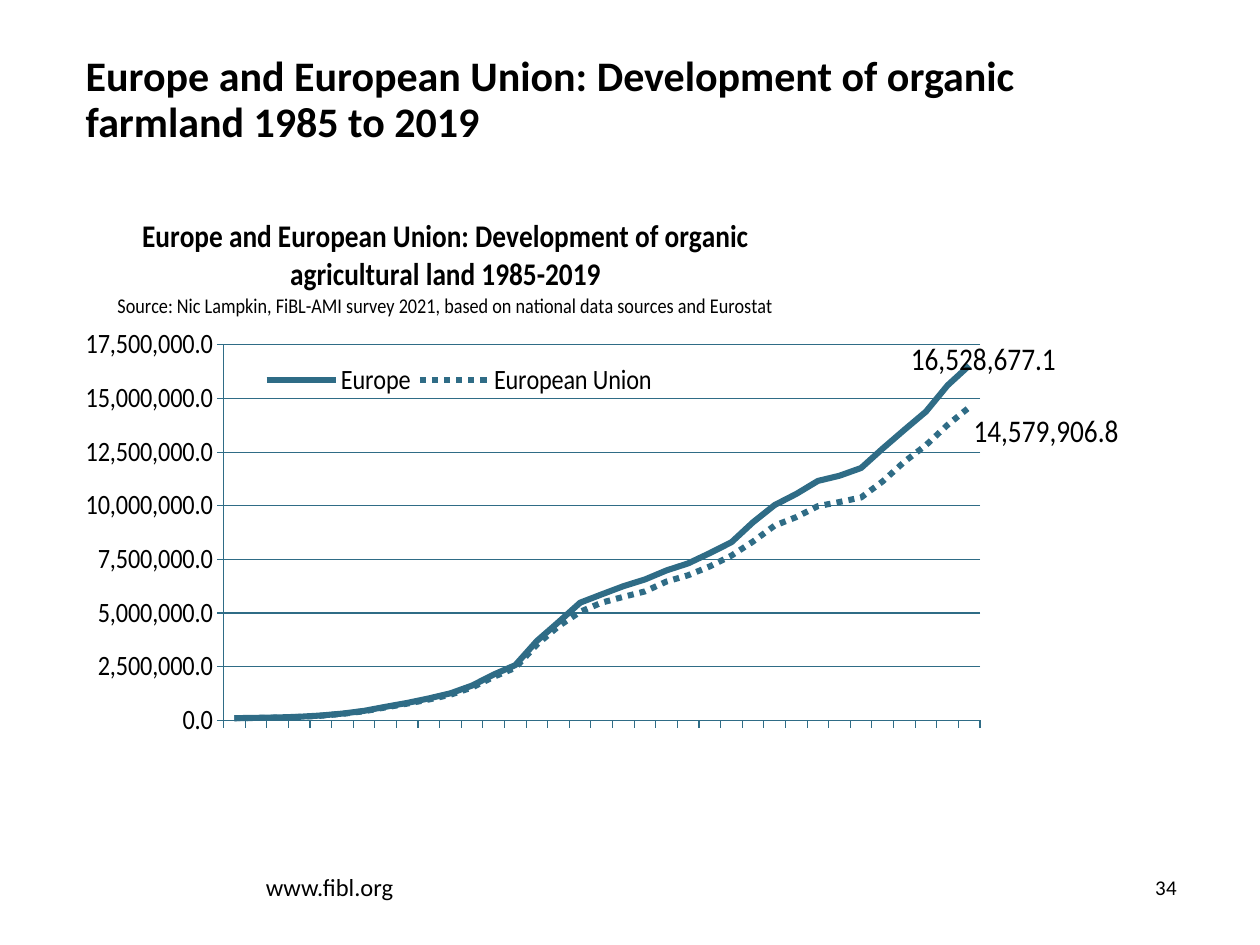
"""Build the slide on the growth of organic farmland in Europe."""
from dataclasses import dataclass

import pptx
import pptx.chart.data
import pptx.dml.color
import pptx.enum.chart
import pptx.enum.dml
import pptx.enum.text
import pptx.oxml
import pptx.oxml.ns
import pptx.util

Inches, Pt = pptx.util.Inches, pptx.util.Pt
RGBColor = pptx.dml.color.RGBColor
ALIGN = pptx.enum.text.PP_ALIGN
ANCHOR = pptx.enum.text.MSO_ANCHOR
XL = pptx.enum.chart
DASH = pptx.enum.dml.MSO_LINE

EUROPE = [
    105230, 117944, 138230, 170699, 228271, 316939.9, 443658, 634172, 813842,
    1023515, 1262265, 1621901.6, 2135723.8, 2573664.9, 3700993.1, 4581068.2,
    5484318.9, 5870898.1, 6249192.8, 6564578.8, 6988448, 7313417.3, 7792048.5,
    8296365, 9229231.5, 10028781.1, 10548522.9, 11154985.3, 11397344.5,
    11757323.4, 12663904.2, 13535234.8, 14382479.6, 15607635.5, 16528677.1]
EUROPEAN_UNION = [
    100310, 112310, 131354, 163112, 217657, 304344, 425884, 606940, 783098,
    974722, 1198629, 1530035, 2029210, 2449912, 3534806.4, 4384719, 5060686,
    5484723, 5752530.7, 6007811.7, 6469179, 6760862, 7171537.2, 7675069,
    8330296.4, 9074252.5, 9468597.1, 9980115, 10169686.3, 10382977.7,
    11135132.1, 12047878.1, 12819818.2, 13762809.7, 14579906.8]


@dataclass
class Theme:
    font: str = "Calibri"
    text: RGBColor = RGBColor(0, 0, 0)
    accent: RGBColor = RGBColor(0x2F, 0x6C, 0x86)
    title: int = 24
    chart: int = 18
    axis: int = 16
    footer: int = 14
    small: int = 12
    thin: float = 0.75
    thick: float = 4


class Deck:
    def __init__(self, prs, theme):
        self.t = theme
        self.s = prs.slides.add_slide(prs.slide_layouts[5])

    def style(self, font, size, bold=False):
        font.name, font.size, font.bold = self.t.font, Pt(size), bold
        font.color.rgb = self.t.text

    def stroke(self, line, width):
        line.color.rgb, line.width = self.t.accent, Pt(width)

    def layout(self, parent, index, **values):
        for old in parent.findall(pptx.oxml.ns.qn("c:layout")):
            parent.remove(old)
        items = "".join(f'<c:{k} val="{v}"/>' for k, v in values.items())
        parent.insert(index, pptx.oxml.parse_xml(
            f'<c:layout {pptx.oxml.ns.nsdecls("c")}>'
            f"<c:manualLayout>{items}</c:manualLayout></c:layout>"))

    def title(self, text, x, y, w, h):
        sp = self.s.shapes.title
        sp.left, sp.top, sp.width, sp.height = map(Inches, (x, y, w, h))
        tf = sp.text_frame
        tf.text = text
        tf.word_wrap, tf.vertical_anchor = True, ANCHOR.TOP
        tf.auto_size = pptx.enum.text.MSO_AUTO_SIZE.NONE
        tf.margin_left = tf.margin_right = tf.margin_top = tf.margin_bottom = 0
        p = tf.paragraphs[0]
        p.alignment, p.line_spacing = ALIGN.LEFT, 0.9
        self.style(p.font, self.t.title, True)

    def text(self, text, x, y, w, h, size, align=ALIGN.LEFT, spacing=0):
        sp = self.s.shapes.add_textbox(*map(Inches, (x, y, w, h)))
        tf = sp.text_frame
        tf.word_wrap, tf.vertical_anchor = True, ANCHOR.BOTTOM
        tf.margin_left = tf.margin_right = 0
        p = tf.paragraphs[0]
        p.alignment = align
        r = p.add_run()
        r.text = text
        self.style(p.font, size)
        if spacing:
            r.font._element.set("spc", str(spacing))

    def line_chart(self, cats, series, x, y, w, h):
        data = pptx.chart.data.CategoryChartData(number_format="#,##0.0")
        data.categories = cats
        for name, vals in series:
            data.add_series(name, vals)
        frame = self.s.shapes.add_chart(
            XL.XL_CHART_TYPE.LINE, *map(Inches, (x, y, w, h)), data)
        chart = frame.chart
        self.style(chart.font, self.t.chart)
        self.layout(chart._chartSpace.chart.plotArea, 0, layoutTarget="inner",
                    xMode="edge", yMode="edge", x=0.122, y=0.245, w=0.844, h=0.632)
        return chart

    def chart_title(self, chart, heading, source):
        tf = chart.chart_title.text_frame
        tf.text = heading
        self.style(tf.paragraphs[0].font, self.t.chart, True)
        p = tf.add_paragraph()
        p.text = source
        self.style(p.font, self.t.small)
        self.layout(chart.chart_title._element, 1,
                    xMode="edge", yMode="edge", x=0, y=0.02)

    def axes(self, chart, top, step):
        cat, val = chart.category_axis, chart.value_axis
        for axis in (cat, val):
            self.style(axis.tick_labels.font, self.t.axis)
            self.stroke(axis.format.line, self.t.thin)
            axis.major_tick_mark = XL.XL_TICK_MARK.OUTSIDE
        cat.tick_label_position = XL.XL_TICK_LABEL_POSITION.NONE
        val.minimum_scale, val.maximum_scale, val.major_unit = 0, top, step
        val.tick_labels.number_format = "#,##0.0"
        val.tick_labels.number_format_is_linked = False
        self.stroke(val.major_gridlines.format.line, self.t.thin)

    def legend(self, chart):
        chart.has_legend = True
        legend = chart.legend
        legend.position = XL.XL_LEGEND_POSITION.TOP
        legend.include_in_layout = False
        self.style(legend.font, self.t.axis)
        self.layout(legend._element, 1, xMode="edge", yMode="edge",
                    x=0.16, y=0.27, w=0.45, h=0.07)

    def series(self, ser, dash, dx, dy):
        ser.smooth = False
        self.stroke(ser.format.line, self.t.thick)
        ser.format.line.dash_style = dash
        ser.data_labels.show_value = False
        label = ser.points[len(ser.values) - 1].data_label
        self.style(label.font, self.t.chart)
        label.position = XL.XL_LABEL_POSITION.RIGHT
        self.layout(label._dLbl, 1, x=dx, y=dy)


def main():
    prs = pptx.Presentation()
    prs.slide_width, prs.slide_height = Inches(10), Inches(7.5)
    theme = Theme()
    deck = Deck(prs, theme)
    deck.title("Europe and European Union: Development of organic farmland 1985 to 2019",
               0.68, 0.44, 8.65, 0.69)
    deck.text("www.fibl.org", 2.11, 6.86, 2.99, 0.34, theme.footer)
    deck.text("34", 8.47, 6.8, 0.87, 0.39, theme.small, ALIGN.RIGHT, 20)

    years = [str(year) for year in range(1985, 2020)]
    chart = deck.line_chart(
        years, [("Europe", EUROPE), ("European Union", EUROPEAN_UNION)],
        0.68, 1.58, 8.2, 4.72)
    deck.chart_title(
        chart,
        "Europe and European Union: Development of organic agricultural land 1985-2019",
        "Source: Nic Lampkin, FiBL-AMI survey 2021, based on national data sources and Eurostat")
    deck.axes(chart, 17500000, 2500000)
    deck.legend(chart)
    europe, union = chart.plots[0].series
    deck.series(europe, DASH.SOLID, -0.07, -0.01)
    deck.series(union, DASH.ROUND_DOT, 0, 0.04)
    prs.save("out.pptx")


if __name__ == "__main__":
    main()
